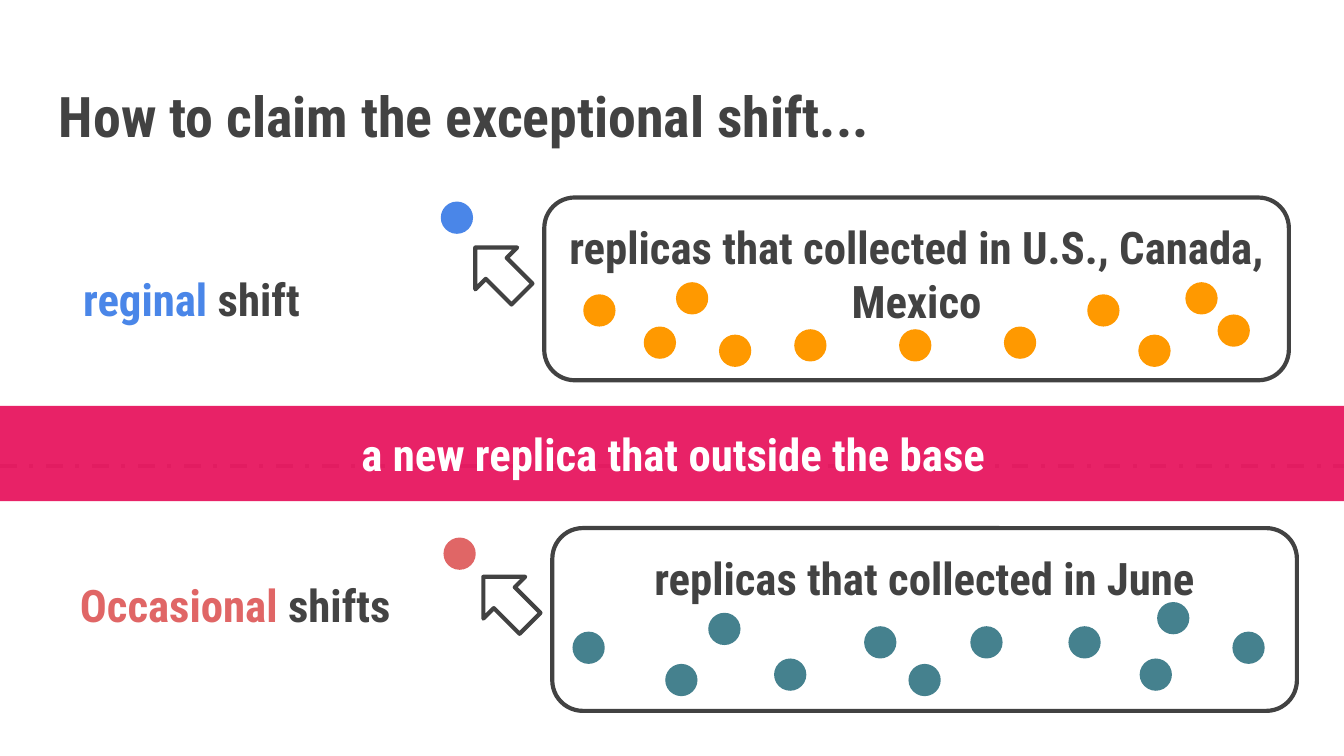
from dataclasses import dataclass

from lxml import etree
from pptx import Presentation
from pptx.dml.color import RGBColor
from pptx.enum.dml import MSO_LINE
from pptx.enum.shapes import MSO_CONNECTOR, MSO_SHAPE
from pptx.enum.text import MSO_ANCHOR, PP_ALIGN
from pptx.oxml.ns import qn
from pptx.util import Inches, Pt

RECT, ROUND, OVAL, ARROW = (MSO_SHAPE.RECTANGLE, MSO_SHAPE.ROUNDED_RECTANGLE,
                            MSO_SHAPE.OVAL, MSO_SHAPE.DOWN_ARROW)
STRAIGHT, DASH_DOT = MSO_CONNECTOR.STRAIGHT, MSO_LINE.DASH_DOT
TOP, MIDDLE, BOTTOM = MSO_ANCHOR.TOP, MSO_ANCHOR.MIDDLE, MSO_ANCHOR.BOTTOM
LEFT, CENTER = PP_ALIGN.LEFT, PP_ALIGN.CENTER


@dataclass(frozen=True)
class Theme:
    font: str = "Roboto Condensed"
    title_size: int = 30
    body_size: int = 24
    line_width: float = 2.25
    dark: str = "424242"
    shifts: str = "434343"
    white: str = "FFFFFF"
    band: str = "E81B63"
    blue: str = "4A86E8"
    red: str = "E06666"
    orange: str = "FF9900"
    teal: str = "45818E"


THEME = Theme()
DOT = 0.24
REGION_DOTS = [(4.34, 2.19), (4.79, 2.43), (5.03, 2.1), (5.35, 2.49),
               (5.91, 2.45), (6.69, 2.45), (7.47, 2.43), (8.09, 2.19),
               (8.47, 2.49), (8.82, 2.1), (9.06, 2.34)]
JUNE_DOTS = [(4.26, 4.7), (4.95, 4.94), (5.27, 4.56), (5.76, 4.9),
             (6.43, 4.66), (6.76, 4.94), (7.22, 4.66), (7.95, 4.66),
             (8.48, 4.9), (8.61, 4.48), (9.17, 4.7)]


def rgb(color):
    return RGBColor.from_string(color)


def write(sp, runs, size=THEME.body_size, anchor=MIDDLE, align=CENTER):
    tf = sp.text_frame
    margins = dict.fromkeys(("margin_left", "margin_top", "margin_right",
                             "margin_bottom"), Inches(0.1))
    for name, value in {**margins, "word_wrap": True,
                        "vertical_anchor": anchor}.items():
        setattr(tf, name, value)
    p = tf.paragraphs[0]
    p.alignment = align
    for text, color in runs:
        r = p.add_run()
        r.text = text
        for name, value in {"name": THEME.font, "size": Pt(size),
                            "bold": True}.items():
            setattr(r.font, name, value)
        r.font.color.rgb = rgb(color)


def add_text(slide, box, runs, **fmt):
    write(slide.shapes.add_textbox(*map(Inches, box)), runs, **fmt)


def add_shape(slide, kind, box, fill, line=None):
    sp = slide.shapes.add_shape(kind, *map(Inches, box))
    sp.shadow.inherit = False
    sp.fill.solid()
    sp.fill.fore_color.rgb = rgb(fill)
    if line:
        sp.line.color.rgb = rgb(line)
        sp.line.width = Pt(THEME.line_width)
    else:
        sp.line.fill.background()
    return sp


def add_dots(slide, points, color):
    for x, y in points:
        add_shape(slide, OVAL, (x, y, DOT, DOT), color)


def add_group_box(slide, x, y, text):
    sp = add_shape(slide, ROUND, (x, y, 5.54, 1.36), THEME.white, THEME.dark)
    sp.adjustments[0] = 0.167
    write(sp, [(text, THEME.dark)], anchor=TOP)


def add_arrow(slide, x, y):
    sp = add_shape(slide, ARROW, (x, y, 0.44, 0.49), THEME.white, THEME.dark)
    sp.rotation = 135


def add_dashed_line(slide, y, width):
    sp = slide.shapes.add_connector(STRAIGHT, 0, Inches(y), Inches(width), Inches(y))
    sp.line.color.rgb = rgb(THEME.dark)
    sp.line.width = Pt(THEME.line_width)
    sp.line.dash_style = DASH_DOT
    etree.SubElement(sp._element.spPr, qn("a:effectLst"))


def add_band(slide, box, text, opacity):
    sp = add_shape(slide, RECT, box, THEME.band)
    color = sp._element.spPr.find(qn("a:solidFill"))[0]
    etree.SubElement(color, qn("a:alpha")).set("val", str(opacity * 1000))
    write(sp, [(text, THEME.white)])


def main():
    prs = Presentation()
    prs.slide_width = Inches(10)
    prs.slide_height = prs.slide_width * 9 // 16
    slide = prs.slides.add_slide(prs.slide_layouts[6])

    add_text(slide, (0.34, 0.41, 9.32, 0.8),
             [("How to claim the exceptional shift...", THEME.dark)],
             size=THEME.title_size, anchor=BOTTOM, align=LEFT)
    add_text(slide, (0.52, 1.82, 2.95, 0.8),
             [("reginal", THEME.blue), (" shift", THEME.dark)], align=LEFT)
    add_text(slide, (0.34, 4.1, 2.82, 0.8),
             [("Occasional ", THEME.red), ("shifts", THEME.shifts)])

    add_group_box(slide, 4.05, 1.47, "replicas that collected in U.S., Canada, Mexico")
    add_dashed_line(slide, 3.47, 10.02)
    add_band(slide, (0, 3.02, 10.02, 0.71), "a new replica that outside the base", 97)
    add_group_box(slide, 4.11, 3.93, "replicas that collected in June")

    add_dots(slide, REGION_DOTS, THEME.orange)
    add_dots(slide, JUNE_DOTS, THEME.teal)
    add_dots(slide, [(3.28, 1.5)], THEME.blue)
    add_dots(slide, [(3.3, 4)], THEME.red)
    add_arrow(slide, 3.49, 1.77)
    add_arrow(slide, 3.55, 4.22)

    prs.save("out.pptx")


if __name__ == "__main__":
    main()
